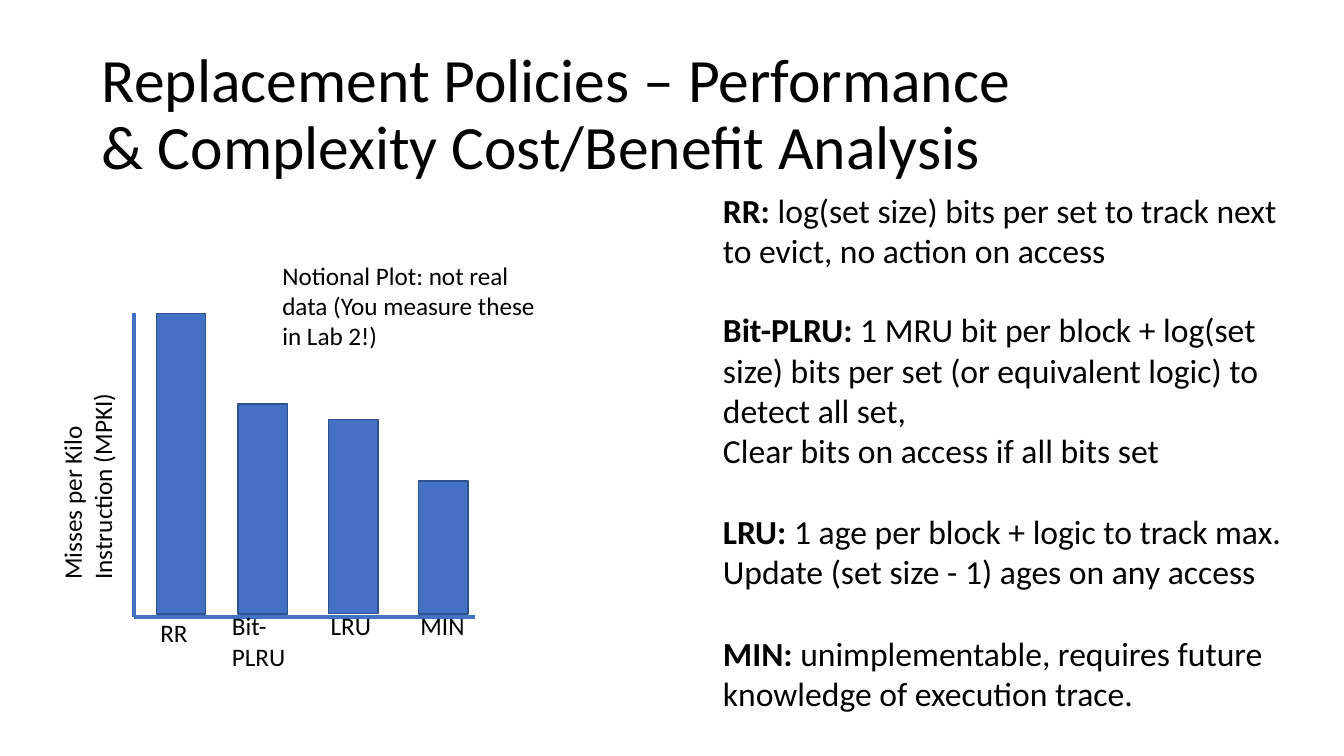
from lxml import etree
from pptx import Presentation
from pptx.dml.color import RGBColor
from pptx.enum.shapes import MSO_CONNECTOR, MSO_SHAPE
from pptx.oxml.ns import qn
from pptx.util import Pt

PX = 9144  # 100 px to the inch
COLORS = {"text": "000000", "bar": "4471C4", "bar_edge": "2E528F"}
STRAIGHT = MSO_CONNECTOR.STRAIGHT
RECTANGLE = MSO_SHAPE.RECTANGLE

presentation = Presentation()
presentation.slide_width = 1333 * PX
presentation.slide_height = 750 * PX
slide = presentation.slides.add_slide(presentation.slide_layouts[6])


def color(name):
    return RGBColor.from_string(COLORS[name])


def add_text(left, top, width, height, size, paragraphs):
    """Add a text box; each paragraph is a (bold lead, plain text) pair."""
    box = slide.shapes.add_textbox(left * PX, top * PX, width * PX, height * PX)
    frame = box.text_frame
    frame.word_wrap = True
    frame.margin_left = frame.margin_right = frame.margin_bottom = 0
    frame.margin_top = PX
    for index, (lead, text) in enumerate(paragraphs):
        paragraph = frame.add_paragraph() if index else frame.paragraphs[0]
        paragraph.font.name = "Calibri"
        paragraph.font.size = Pt(size)
        paragraph.font.color.rgb = color("text")
        if lead:
            run = paragraph.add_run()
            run.text = lead
            run.font.bold = True
        paragraph.add_run().text = text
    return frame


# Title
title = add_text(101, 47, 925, 134, 44, [
    ("", "Replacement Policies – Performance & Complexity Cost/Benefit Analysis"),
])
title.paragraphs[0].line_spacing = Pt(47.5)

# Plot axes
AXIS_LEFT, AXIS_TOP, AXIS_RIGHT, AXIS_BOTTOM = 133, 311, 471, 612
for end_x, end_y in [(AXIS_LEFT, AXIS_TOP), (AXIS_RIGHT, AXIS_BOTTOM)]:
    axis = slide.shapes.add_connector(
        STRAIGHT, AXIS_LEFT * PX, AXIS_BOTTOM * PX, end_x * PX, end_y * PX)
    axis.line.color.rgb = color("bar")
    axis.line.width = Pt(3)
    etree.SubElement(axis._element.spPr, qn("a:effectLst"))

# Bars with their labels: bar left, bar top, label, label box
BAR_WIDTH, BAR_BOTTOM = 49, 609
bars = [
    (155, 311, "RR", (159, 611, 30, 33)),
    (236, 401, "Bit- PLRU", (230, 605, 56, 63)),
    (326, 416, "LRU", (328, 605, 43, 33)),
    (415, 477, "MIN", (417, 605, 47, 33)),
]
for left, top, label, label_box in bars:
    bar = slide.shapes.add_shape(
        RECTANGLE, left * PX, top * PX, BAR_WIDTH * PX, (BAR_BOTTOM - top) * PX)
    bar.shadow.inherit = False
    bar.fill.solid()
    bar.fill.fore_color.rgb = color("bar")
    bar.line.color.rgb = color("bar_edge")
    bar.line.width = Pt(1)
    add_text(*label_box, 18, [("", label)])

# Axis title, read from bottom to top
axis_title = add_text(61, 387, 58, 188, 18, [
    ("", "Misses per Kilo"), ("", "Instruction (MPKI)"),
])
axis_title.margin_top = 0
axis_title.paragraphs[0].line_spacing = Pt(18.1)
axis_title._txBody.bodyPr.set("vert", "vert270")

add_text(280, 257, 254, 93, 18, [
    ("", "Notional Plot: not real data (You measure these in Lab 2!)"),
])

# Cost of each policy
policy_notes = [
    (187, 83, [("RR: ", "log(set size) bits per set to track next to evict, "
                        "no action on access")]),
    (306, 163, [("Bit-PLRU: ", "1 MRU bit per block + log(set size) bits per set "
                               "(or equivalent logic) to detect all set,"),
                ("", "Clear bits on access if all bits set")]),
    (506, 83, [("LRU: ", "1 age per block + logic to track max. "
                         "Update (set size - 1) ages on any access")]),
    (627, 83, [("MIN: ", "unimplementable, requires future knowledge of "
                         "execution trace.")]),
]
for top, height, paragraphs in policy_notes:
    add_text(717, top, 565, height, 24, paragraphs)

presentation.save("out.pptx")
